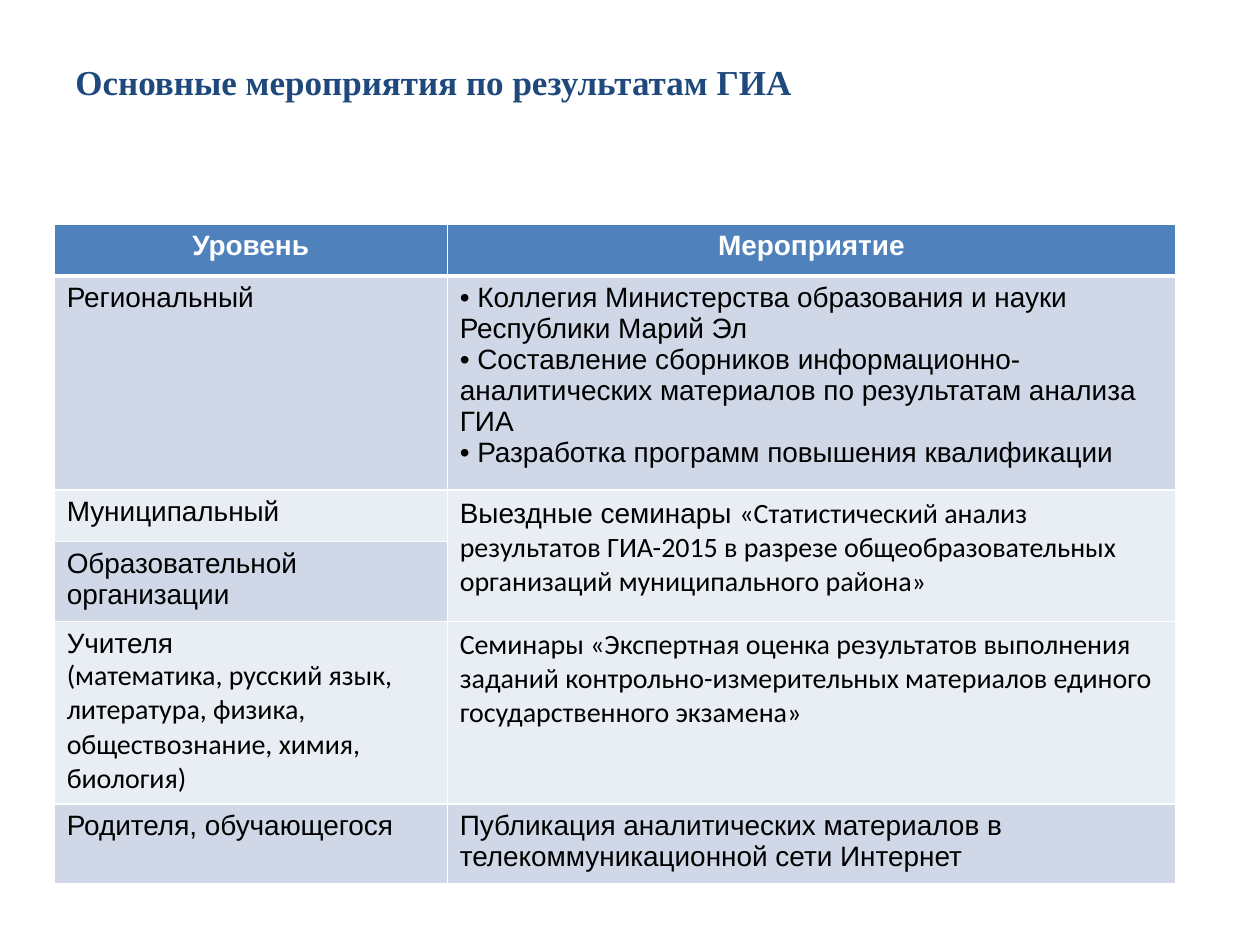
from lxml import etree
from pptx import Presentation
from pptx import util as u
from pptx.dml.color import RGBColor
from pptx.enum import text as t
from pptx.oxml.ns import qn

NAVY = RGBColor(0x1F, 0x49, 0x7D)
BLUE = RGBColor(0x4F, 0x81, 0xBD)
DARK = RGBColor(0xD0, 0xD8, 0xE8)
PALE = RGBColor(0xE9, 0xED, 0xF4)
WHITE = RGBColor(0xFF, 0xFF, 0xFF)
BLACK = RGBColor(0, 0, 0)
SANS, BODY, SERIF = "Arial", "Calibri", "Times New Roman"

WIDTHS = [3.12, 5.78]
HEIGHTS = [0.41, 0.41, 0.41, 0.41, 1.45, 0.41]
FILLS = [BLUE, DARK, PALE, DARK, PALE, DARK]
HEADS = ["Уровень", "Мероприятие"]
LEVELS = [
    ["Региональный"],
    ["Муниципальный"],
    ["Образовательной организации"],
    ["Учителя",
     [("(математика, русский язык, литература, физика, "
       "обществознание, химия, биология)", BODY)]],
    ["Родителя, обучающегося"],
]
BOARD = [
    " Коллегия Министерства образования и науки Республики Марий Эл",
    " Составление сборников информационно-аналитических материалов "
    "по результатам анализа ГИА",
    " Разработка программ повышения квалификации",
]
VISITS = [[
    ("Выездные семинары ", SANS),
    ("«Статистический анализ результатов ГИА-2015 в разрезе "
     "общеобразовательных организаций муниципального района»", BODY),
]]
EXPERT = [[("Семинары «Экспертная оценка результатов выполнения заданий "
            "контрольно-измерительных материалов единого "
            "государственного экзамена»", BODY)]]
PRESS = ["Публикация аналитических материалов в "
         "телекоммуникационной сети Интернет"]


def add_mark(para):
    props = para._p.get_or_add_pPr()
    props.set("marL", "0")
    props.set("indent", "0")
    etree.SubElement(props, qn("a:buFont")).set("typeface", SANS)
    etree.SubElement(props, qn("a:buChar")).set("char", "•")


def write(frame, paras, size=16, face=SANS, color=BLACK, bold=False,
          align=t.PP_ALIGN.LEFT, mark=False):
    frame.word_wrap = True
    for i, item in enumerate(paras):
        para = frame.add_paragraph() if i else frame.paragraphs[0]
        para.alignment = align
        if mark:
            add_mark(para)
        parts = [(item, face)] if isinstance(item, str) else item
        for words, name in parts:
            run = para.add_run()
            run.text = words
            font = run.font
            font.size, font.name, font.bold = u.Pt(size), name, bold
            font.color.rgb = color


def add_edges(cell, base):
    props = cell._tc.get_or_add_tcPr()
    for side, width in zip("LRTB", [1, 1, 1, base]):
        line = etree.SubElement(props, qn("a:ln" + side), w=str(u.Pt(width)))
        fill = etree.SubElement(line, qn("a:solidFill"))
        etree.SubElement(fill, qn("a:srgbClr"), val=str(WHITE))


def add_title(slide):
    box = slide.shapes.add_textbox(u.Inches(0.5), u.Inches(0.3),
                                   u.Inches(9), u.Inches(0.69))
    box.text_frame.vertical_anchor = t.MSO_ANCHOR.MIDDLE
    write(box.text_frame, ["Основные мероприятия по результатам ГИА"],
          size=20, face=SERIF, color=NAVY, bold=True)


def add_grid(slide):
    grid = slide.shapes.add_table(
        len(HEIGHTS), len(WIDTHS), u.Inches(0.43), u.Inches(1.78),
        u.Inches(sum(WIDTHS)), u.Inches(sum(HEIGHTS))).table
    grid.horz_banding = False
    for col, width in zip(grid.columns, WIDTHS):
        col.width = u.Inches(width)
    for i, (row, height) in enumerate(zip(grid.rows, HEIGHTS)):
        row.height = u.Inches(height)
        for cell in row.cells:
            add_edges(cell, 1 if i else 3)
            cell.fill.solid()
            cell.fill.fore_color.rgb = FILLS[i]
    grid.cell(2, 1).merge(grid.cell(3, 1))

    for j, head in enumerate(HEADS):
        write(grid.cell(0, j).text_frame, [head], color=WHITE, bold=True,
              align=t.PP_ALIGN.CENTER)
    for i, level in enumerate(LEVELS, 1):
        write(grid.cell(i, 0).text_frame, level)
    write(grid.cell(1, 1).text_frame, BOARD, mark=True)
    for i, event in [(2, VISITS), (4, EXPERT), (5, PRESS)]:
        write(grid.cell(i, 1).text_frame, event)


def main():
    deck = Presentation()
    deck.slide_width, deck.slide_height = u.Inches(10), u.Inches(7.5)
    slide = deck.slides.add_slide(deck.slide_layouts[6])
    add_title(slide)
    add_grid(slide)
    deck.save("out.pptx")


if __name__ == "__main__":
    main()
